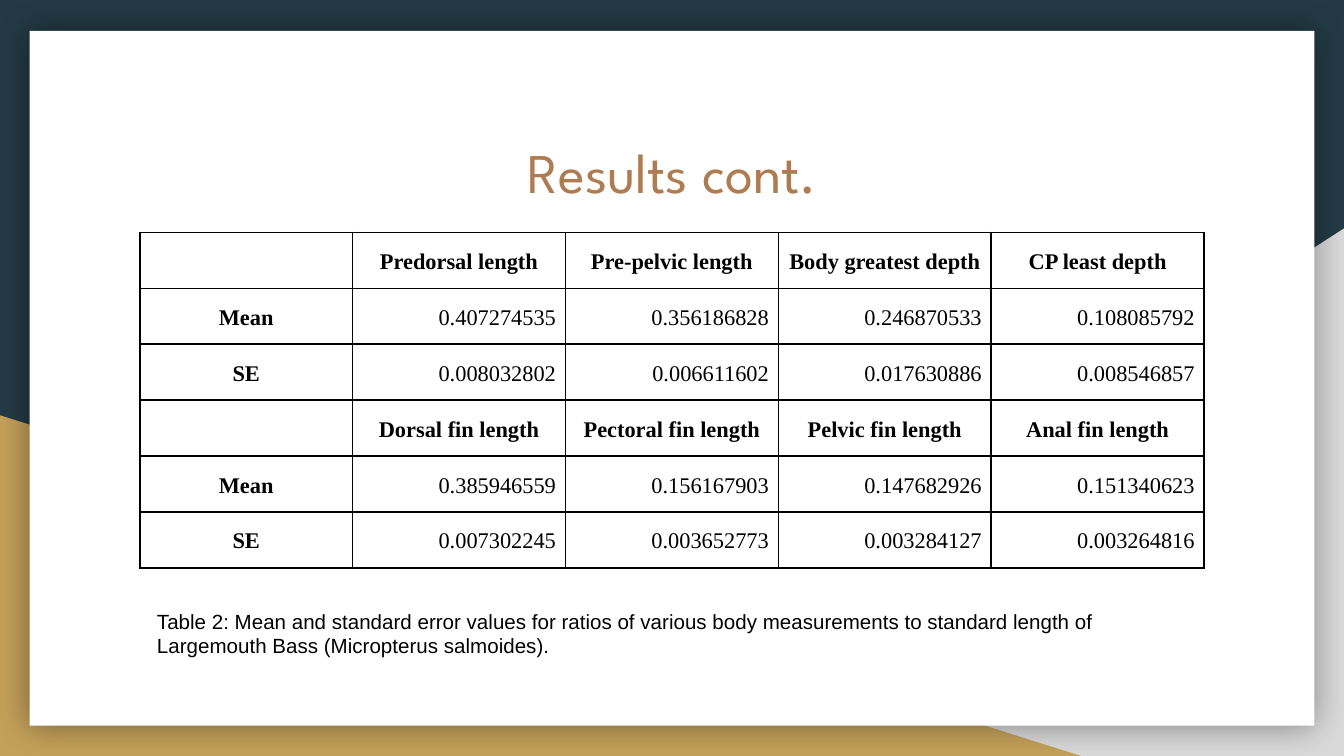
from lxml.etree import SubElement
from pptx import Presentation
from pptx.dml.color import RGBColor
from pptx.enum.shapes import MSO_SHAPE as Shape
from pptx.enum.text import MSO_ANCHOR as Anchor, PP_ALIGN as Align
from pptx.oxml import parse_xml
from pptx.oxml.ns import nsdecls, qn
from pptx.util import Inches, Pt

NAVY = RGBColor(0x23, 0x3A, 0x44)
GREY = RGBColor(0xD9, 0xD9, 0xD9)
GOLD = RGBColor(0xC4, 0xA1, 0x5A)
WHITE = RGBColor(0xFF, 0xFF, 0xFF)
BRONZE = RGBColor(0xAF, 0x7B, 0x51)
BLACK = RGBColor(0, 0, 0)

TITLE = "Results cont."
ROWS = [
    ("", "Predorsal length", "Pre-pelvic length", "Body greatest depth", "CP least depth"),
    ("Mean", "0.407274535", "0.356186828", "0.246870533", "0.108085792"),
    ("SE", "0.008032802", "0.006611602", "0.017630886", "0.008546857"),
    ("", "Dorsal fin length", "Pectoral fin length", "Pelvic fin length", "Anal fin length"),
    ("Mean", "0.385946559", "0.156167903", "0.147682926", "0.151340623"),
    ("SE", "0.007302245", "0.003652773", "0.003284127", "0.003264816"),
]
CAPTION = (
    "Table 2: Mean and standard error values for ratios of various body measurements "
    "to standard length of Largemouth Bass (Micropterus salmoides)."
)
TABLE_LEFT, TABLE_TOP, TABLE_WIDTH, ROW_HEIGHT = 1.04, 1.73, 7.92, 0.416


def add_panel(page, preset, place, color):
    panel = page.shapes.add_shape(preset, *map(Inches, place))
    panel.fill.solid()
    panel.fill.fore_color.rgb = color
    panel.line.fill.background()
    panel.shadow.inherit = False
    return panel


def add_glow(panel):
    effects = panel._element.spPr.find(qn("a:effectLst"))
    effects.append(parse_xml(
        f'<a:outerShdw {nsdecls("a")} blurRad="{Pt(18)}" dist="0" dir="0" algn="ctr" '
        'rotWithShape="0"><a:srgbClr val="000000"><a:alpha val="40000"/></a:srgbClr>'
        '</a:outerShdw>'))


def write(para, text, size, font, color, bold=False):
    span = para.add_run()
    span.text = text
    span.font.size = Pt(size)
    span.font.name = font
    span.font.bold = bold
    span.font.color.rgb = color


def set_frame(frame):
    frame.word_wrap = True
    frame.vertical_anchor = Anchor.TOP
    frame.margin_left = frame.margin_right = Inches(0.1)
    frame.margin_top = frame.margin_bottom = Inches(0.1)


def set_borders(cell):
    props = cell._tc.get_or_add_tcPr()
    for index, side in enumerate(("lnL", "lnR", "lnT", "lnB")):
        props.insert(index, parse_xml(
            f'<a:{side} {nsdecls("a")} w="{Pt(1)}"><a:solidFill>'
            f'<a:srgbClr val="{BLACK}"/></a:solidFill></a:{side}>'))


def fill_cell(cell, text, is_value):
    cell.fill.background()
    cell.margin_left = cell.margin_right = Inches(0.07)
    cell.margin_top = cell.margin_bottom = Inches(0.1)
    set_borders(cell)
    para = cell.text_frame.paragraphs[0]
    para.line_spacing = 1.15
    para.alignment = Align.RIGHT if is_value else Align.CENTER
    if text:
        write(para, text, 12, "Times New Roman", BLACK, not is_value)
    else:
        SubElement(para._p, qn("a:endParaRPr")).set("sz", "1200")


def add_results(page):
    place = (TABLE_LEFT, TABLE_TOP, TABLE_WIDTH, ROW_HEIGHT * len(ROWS))
    table = page.shapes.add_table(len(ROWS), len(ROWS[0]), *map(Inches, place)).table
    table.first_row = table.horz_banding = False
    for column in table.columns:
        column.width = Inches(TABLE_WIDTH / len(ROWS[0]))
    for row, texts in zip(table.rows, ROWS):
        row.height = Inches(ROW_HEIGHT)
        for number, (cell, text) in enumerate(zip(row.cells, texts)):
            fill_cell(cell, text, bool(texts[0]) and number > 0)


def main():
    deck = Presentation()
    deck.slide_width, deck.slide_height = Inches(10), Inches(5.625)
    page = deck.slides.add_slide(deck.slide_layouts[5])
    page.background.fill.solid()
    page.background.fill.fore_color.rgb = NAVY

    title = page.shapes.title
    grey = add_panel(page, Shape.RIGHT_TRIANGLE, (3.92, 1.7, 6.08, 3.93), GREY)
    grey._element.spPr.get_or_add_xfrm().set("flipH", "1")
    add_panel(page, Shape.RIGHT_TRIANGLE, (0, 3.09, 8.06, 2.54), GOLD)
    add_glow(add_panel(page, Shape.RECTANGLE, (0.22, 0.23, 9.56, 5.17), WHITE))

    page.shapes._spTree.append(title._element)
    title.left, title.top, title.width, title.height = map(Inches, (0.9, 0.92, 8.21, 1.04))
    set_frame(title.text_frame)
    heading = title.text_frame.paragraphs[0]
    heading.alignment = Align.CENTER
    write(heading, TITLE, 30, "League Spartan", BRONZE)

    add_results(page)

    caption = page.shapes.add_textbox(*map(Inches, (1.07, 4.43, 7.93, 0.66)))
    set_frame(caption.text_frame)
    write(caption.text_frame.paragraphs[0], CAPTION, 11, "Arial", BLACK)

    deck.save("out.pptx")


if __name__ == "__main__":
    main()
